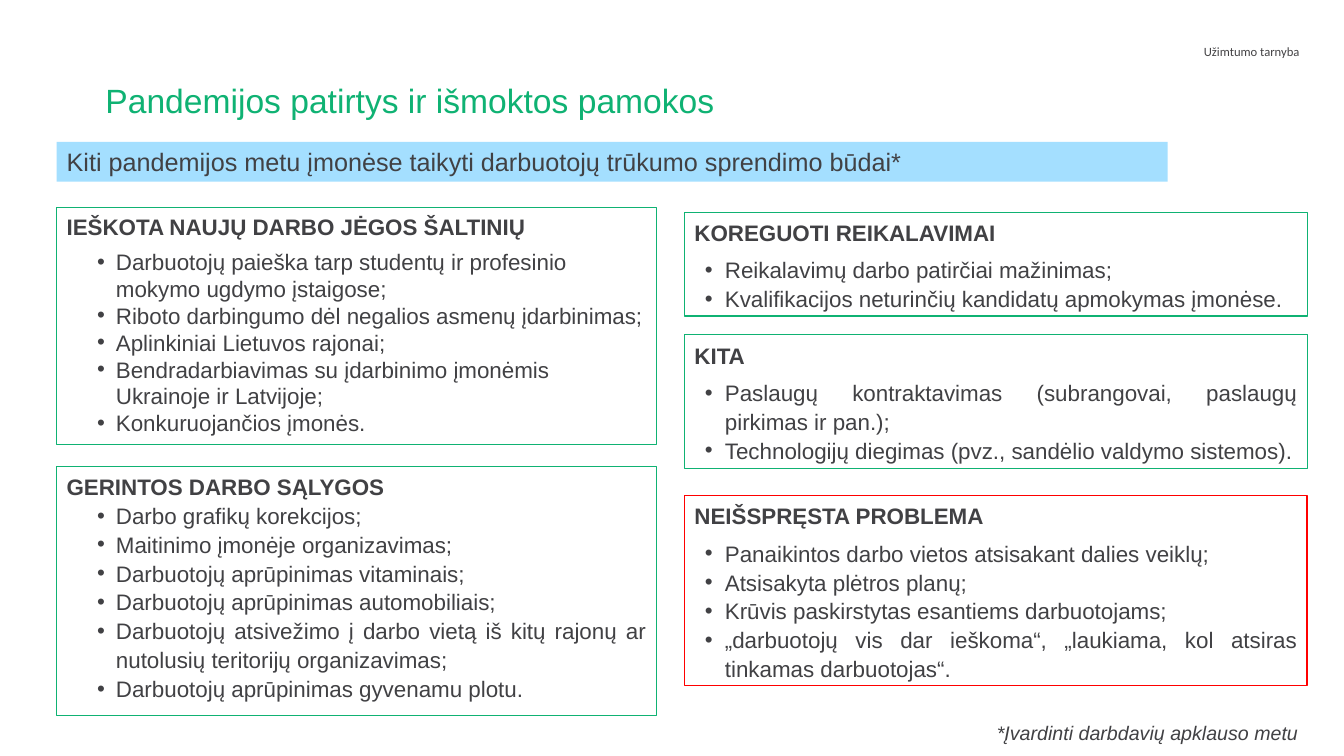
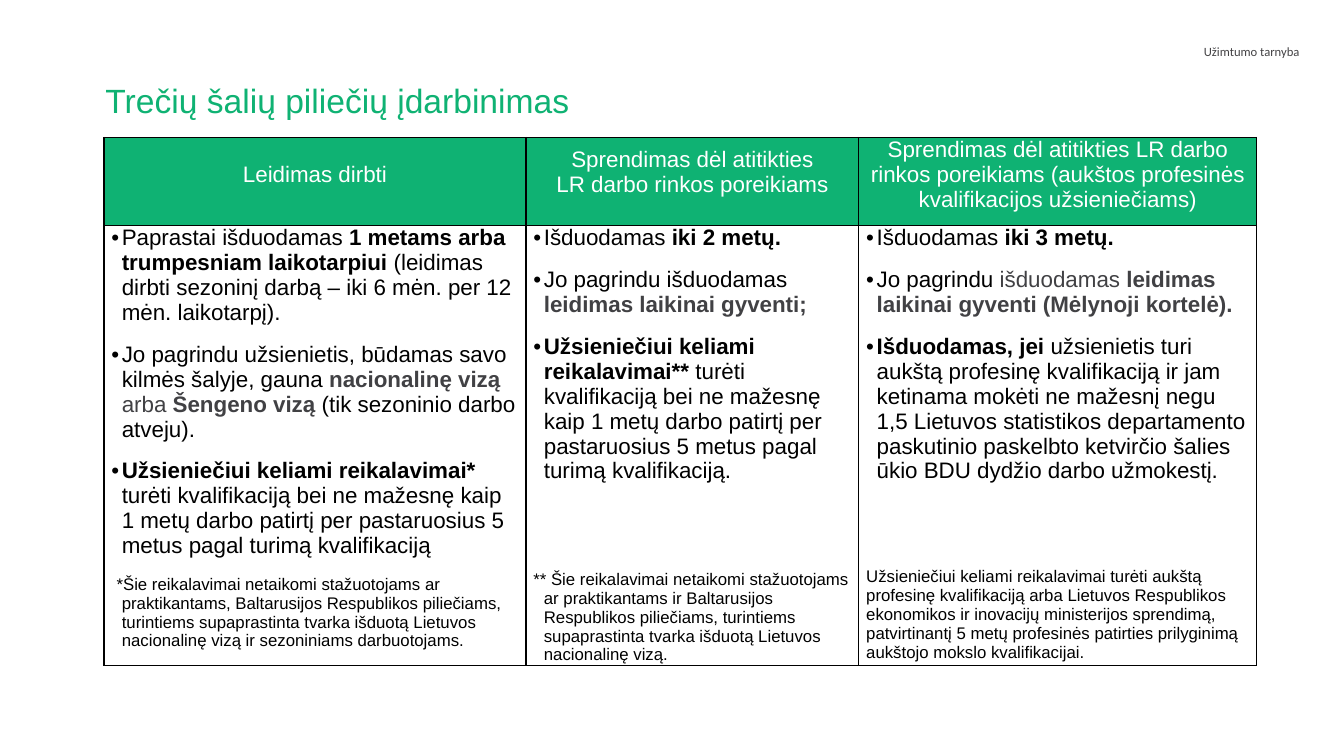
from dataclasses import dataclass

from lxml import etree
from pptx import Presentation
from pptx.dml.color import RGBColor
from pptx.enum.shapes import MSO_SHAPE
from pptx.enum.text import MSO_ANCHOR, PP_ALIGN
from pptx.oxml.ns import qn
from pptx.slide import Slide
from pptx.table import _Cell
from pptx.text.text import TextFrame, _Paragraph
from pptx.util import Pt

PX = 9525
RECTANGLE = MSO_SHAPE.RECTANGLE
TOP = MSO_ANCHOR.TOP
LEFT, CENTER, RIGHT, JUSTIFY = PP_ALIGN.LEFT, PP_ALIGN.CENTER, PP_ALIGN.RIGHT, PP_ALIGN.JUSTIFY


@dataclass(frozen=True)
class Theme:
    green: str = "0FB273"
    red: str = "FF0000"
    sky: str = "A4DFFF"
    text: str = "414144"
    agency: str = "434244"
    black: str = "000000"
    white: str = "FFFFFF"
    font: str = "Arial"
    agency_font: str = "Calibri"
    title_size: int = 24
    band_size: int = 18
    body_size: int = 16
    footnote_size: int = 14
    note_size: int = 12
    agency_size: int = 9
    tight: float = 19.2
    loose: float = 20.6
    table_pitch: float = 17.8
    note_pitch: float = 13.4


THEME = Theme()


@dataclass(frozen=True)
class Box:
    left: int
    top: int
    width: int
    height: int

    def emu(self) -> tuple[int, ...]:
        return tuple(n * PX for n in (self.left, self.top, self.width, self.height))


@dataclass(frozen=True)
class Span:
    text: str
    bold: bool = False
    color: str = THEME.text
    italic: bool = False


@dataclass(frozen=True)
class Para:
    """A paragraph; pitch is the line pitch in points, left and hang are in px."""
    spans: tuple[Span, ...]
    size: int = THEME.body_size
    font: str = THEME.font
    align: PP_ALIGN = LEFT
    pitch: float | None = None
    before: int = 0
    after: int = 0
    left: int = 0
    hang: int = 0
    bullet: bool = False


@dataclass(frozen=True)
class Panel:
    box: Box
    heading: str
    items: tuple[str, ...]
    left: int
    hang: int
    align: PP_ALIGN = JUSTIFY
    pitch: float = THEME.loose
    heading_gap: int = 6
    line: str = THEME.green
    line_width: float = 0.75


@dataclass(frozen=True)
class Column:
    width: int
    heading: str
    heading_drop: int
    points: tuple[tuple[Span, ...], ...]
    note: Para


def apply(target: object, values: dict[str, object]) -> None:
    for name, value in values.items():
        setattr(target, name, value)


def write_para(paragraph: _Paragraph, para: Para) -> None:
    properties = paragraph._p.get_or_add_pPr()
    properties.set("marL", str(para.left * PX))
    properties.set("indent", str(-para.hang * PX))
    if para.bullet:
        etree.SubElement(properties, qn("a:buFont")).set("typeface", THEME.font)
        etree.SubElement(properties, qn("a:buChar")).set("char", "•")
    apply(paragraph, {
        "alignment": para.align,
        "line_spacing": Pt(para.pitch) if para.pitch else None,
        "space_before": Pt(para.before),
        "space_after": Pt(para.after),
    })
    for span in para.spans:
        for index, line in enumerate(span.text.split("\v")):
            if index:
                paragraph.add_line_break()
            run = paragraph.add_run()
            run.text = line
            apply(run.font, {"name": para.font, "size": Pt(para.size),
                             "bold": span.bold, "italic": span.italic})
            run.font.color.rgb = RGBColor.from_string(span.color)


def write_paras(frame: TextFrame, paras: list[Para]) -> None:
    for index, para in enumerate(paras):
        write_para(frame.add_paragraph() if index else frame.paragraphs[0], para)


def add_text(slide: Slide, box: Box, para: Para) -> None:
    frame = slide.shapes.add_textbox(*box.emu()).text_frame
    apply(frame, {"word_wrap": True, "vertical_anchor": TOP})
    write_paras(frame, [para])


def add_box(slide: Slide, box: Box, paras: list[Para], fill: str | None = None,
            line: str | None = None, line_width: float = 0) -> None:
    shape = slide.shapes.add_shape(RECTANGLE, *box.emu())
    shape.shadow.inherit = False
    if fill:
        shape.fill.solid()
        shape.fill.fore_color.rgb = RGBColor.from_string(fill)
    else:
        shape.fill.background()
    if line:
        shape.line.color.rgb = RGBColor.from_string(line)
        shape.line.width = Pt(line_width)
    else:
        shape.line.fill.background()
    apply(shape.text_frame, {"word_wrap": True, "vertical_anchor": TOP})
    write_paras(shape.text_frame, paras)


def add_panel(slide: Slide, panel: Panel) -> None:
    heading = Para((Span(panel.heading, bold=True),), align=panel.align,
                   pitch=panel.pitch, after=panel.heading_gap)
    items = [Para((Span(item),), align=panel.align, pitch=panel.pitch,
                  left=panel.left, hang=panel.hang, bullet=True) for item in panel.items]
    add_box(slide, panel.box, [heading, *items], line=panel.line, line_width=panel.line_width)


def format_cell(cell: _Cell, fill: str | None, margin_top: int = 0) -> None:
    apply(cell, {"margin_left": 7 * PX, "margin_right": 7 * PX,
                 "margin_top": margin_top * PX, "margin_bottom": 0, "vertical_anchor": TOP})
    properties = cell._tc.get_or_add_tcPr()
    for edge in ("a:lnL", "a:lnR", "a:lnT", "a:lnB"):
        border = etree.SubElement(properties, qn(edge), w=str(Pt(1)))
        solid = etree.SubElement(border, qn("a:solidFill"))
        etree.SubElement(solid, qn("a:srgbClr"), val=THEME.black)
    if fill:
        cell.fill.solid()
        cell.fill.fore_color.rgb = RGBColor.from_string(fill)
    else:
        cell.fill.background()


def add_permit_table(slide: Slide, columns: tuple[Column, ...]) -> None:
    heights = (84, 419)
    box = Box(99, 131, sum(column.width for column in columns), sum(heights))
    table = slide.shapes.add_table(2, len(columns), *box.emu()).table
    apply(table, {"first_row": False, "horz_banding": False})
    for row, height in zip(table.rows, heights):
        row.height = height * PX
    for index, column in enumerate(columns):
        table.columns[index].width = column.width * PX
        heading, body = table.cell(0, index), table.cell(1, index)
        format_cell(heading, THEME.green, column.heading_drop)
        write_paras(heading.text_frame, [Para((Span(column.heading, color=THEME.white),),
                                              align=CENTER, pitch=THEME.table_pitch)])
        format_cell(body, None)
        points = [Para(spans, pitch=THEME.table_pitch, before=6 if number else 0, after=6,
                       left=10, hang=10, bullet=True)
                  for number, spans in enumerate(column.points)]
        write_paras(body.text_frame, [*points, column.note])


def add_titled_slide(deck: Presentation, title: str) -> Slide:
    slide = deck.slides.add_slide(deck.slide_layouts[6])
    add_text(slide, Box(815, 37, 432, 45),
             Para((Span("Užimtumo tarnyba", color=THEME.agency),), size=THEME.agency_size,
                  font=THEME.agency_font, align=RIGHT))
    add_text(slide, Box(91, 71, 1098, 72),
             Para((Span(title, color=THEME.green),), size=THEME.title_size))
    return slide


def plain(text: str) -> Span:
    return Span(text, color=THEME.black)


def strong(text: str) -> Span:
    return Span(text, bold=True, color=THEME.black)


def note(text: str, before: int, left: int = 0, hang: int = 0) -> Para:
    return Para((plain(text),), size=THEME.note_size, pitch=THEME.note_pitch,
                before=before, left=left, hang=hang)


def left_box(top: int, height: int) -> Box:
    return Box(54, top, 571, height)


def right_box(top: int, height: int) -> Box:
    return Box(652, top, 593, height)


PANELS = (
    Panel(left_box(444, 237), "GERINTOS DARBO SĄLYGOS", (
        "Darbo grafikų korekcijos;",
        "Maitinimo įmonėje organizavimas;",
        "Darbuotojų aprūpinimas vitaminais;",
        "Darbuotojų aprūpinimas automobiliais;",
        "Darbuotojų atsivežimo į darbo vietą iš kitų rajonų ar nutolusių teritorijų organizavimas;",
        "Darbuotojų aprūpinimas gyvenamu plotu.",
    ), 47, 18, heading_gap=0),
    Panel(left_box(198, 225), "IEŠKOTA NAUJŲ DARBO JĖGOS ŠALTINIŲ", (
        "Darbuotojų paieška tarp studentų ir profesinio mokymo ugdymo įstaigose;",
        "Riboto darbingumo dėl negalios asmenų įdarbinimas;",
        "Aplinkiniai Lietuvos rajonai;",
        "Bendradarbiavimas su įdarbinimo įmonėmis Ukrainoje ir Latvijoje;",
        "Konkuruojančios įmonės.",
    ), 47, 18, align=LEFT, pitch=THEME.tight),
    Panel(right_box(202, 99), "KOREGUOTI REIKALAVIMAI", (
        "Reikalavimų darbo patirčiai mažinimas;",
        "Kvalifikacijos neturinčių kandidatų apmokymas įmonėse.",
    ), 29, 19, align=LEFT),
    Panel(right_box(319, 127), "KITA", (
        "Paslaugų kontraktavimas (subrangovai, paslaugų pirkimas ir pan.);",
        "Technologijų diegimas (pvz., sandėlio valdymo sistemos).",
    ), 29, 19),
    Panel(right_box(472, 181), "NEIŠSPRĘSTA PROBLEMA", (
        "Panaikintos darbo vietos atsisakant dalies veiklų;",
        "Atsisakyta plėtros planų;",
        "Krūvis paskirstytas esantiems darbuotojams;",
        "„darbuotojų vis dar ieškoma“, „laukiama, kol atsiras tinkamas darbuotojas“.",
    ), 29, 19, line=THEME.red, line_width=1.25),
)

PERMITS = (
    Column(402, "Leidimas dirbti", 24, (
        (plain("Paprastai išduodamas "), strong("1 metams arba trumpesniam laikotarpiui"),
         plain(" (leidimas dirbti sezoninį darbą – iki 6 mėn. per 12 mėn. laikotarpį).")),
        (plain("Jo pagrindu užsienietis, būdamas savo kilmės šalyje, gauna "),
         Span("nacionalinę vizą ", bold=True), Span("arba "), Span("Šengeno vizą ", bold=True),
         plain("(tik sezoninio darbo atveju).")),
        (strong("Užsieniečiui keliami reikalavimai* "),
         plain("turėti kvalifikaciją bei ne mažesnę kaip 1 metų darbo patirtį per "
               "pastaruosius 5 metus pagal turimą kvalifikaciją")),
    ), note("*Šie reikalavimai netaikomi stažuotojams ar praktikantams, Baltarusijos Respublikos "
            "piliečiams, turintiems supaprastinta tvarka išduotą Lietuvos nacionalinę vizą ir "
            "sezoniniams darbuotojams.", before=6, left=10, hang=5)),
    Column(317, "Sprendimas dėl atitikties\vLR darbo rinkos poreikiams", 9, (
        (plain("Išduodamas "), strong("iki 2 metų.")),
        (plain("Jo pagrindu išduodamas "), Span("leidimas laikinai gyventi;", bold=True)),
        (strong("Užsieniečiui keliami reikalavimai** "),
         plain("turėti kvalifikaciją bei ne mažesnę kaip 1 metų darbo patirtį per "
               "pastaruosius 5 metus pagal turimą kvalifikaciją.")),
    ), note("** Šie reikalavimai netaikomi stažuotojams ar praktikantams ir Baltarusijos "
            "Respublikos piliečiams, turintiems supaprastinta tvarka išduotą Lietuvos "
            "nacionalinę vizą.", before=56, left=10, hang=10)),
    Column(379, "Sprendimas dėl atitikties LR darbo rinkos poreikiams "
                "(aukštos profesinės kvalifikacijos užsieniečiams)", 0, (
        (plain("Išduodamas "), strong("iki 3 metų.")),
        (plain("Jo pagrindu "), Span("išduodamas "),
         Span("leidimas laikinai gyventi (Mėlynoji kortelė).", bold=True)),
        (strong("Išduodamas, jei "),
         plain("užsienietis turi aukštą profesinę kvalifikaciją ir jam ketinama mokėti ne "
               "mažesnį negu 1,5 Lietuvos statistikos departamento paskutinio paskelbto "
               "ketvirčio šalies ūkio BDU dydžio darbo užmokestį.")),
    ), note("Užsieniečiui keliami reikalavimai turėti aukštą profesinę kvalifikaciją arba "
            "Lietuvos Respublikos ekonomikos ir inovacijų ministerijos sprendimą, patvirtinantį "
            "5 metų profesinės patirties prilyginimą aukštojo mokslo kvalifikacijai.", before=54)),
)


def main() -> None:
    deck = Presentation()
    apply(deck, {"slide_width": 1280 * PX, "slide_height": 720 * PX})

    lessons = add_titled_slide(deck, "Pandemijos patirtys ir išmoktos pamokos")
    subtitle = Span("Kiti pandemijos metu įmonėse taikyti darbuotojų trūkumo sprendimo būdai*")
    add_box(lessons, Box(54, 135, 1058, 38),
            [Para((subtitle,), size=THEME.band_size)], fill=THEME.sky)
    for panel in PANELS:
        add_panel(lessons, panel)
    add_text(lessons, Box(820, 682, 426, 33),
             Para((Span("*Įvardinti darbdavių apklauso metu", italic=True),),
                  size=THEME.footnote_size, align=RIGHT))

    permits = add_titled_slide(deck, "Trečių šalių piliečių įdarbinimas")
    add_permit_table(permits, PERMITS)
    deck.save("out.pptx")


if __name__ == "__main__":
    main()
